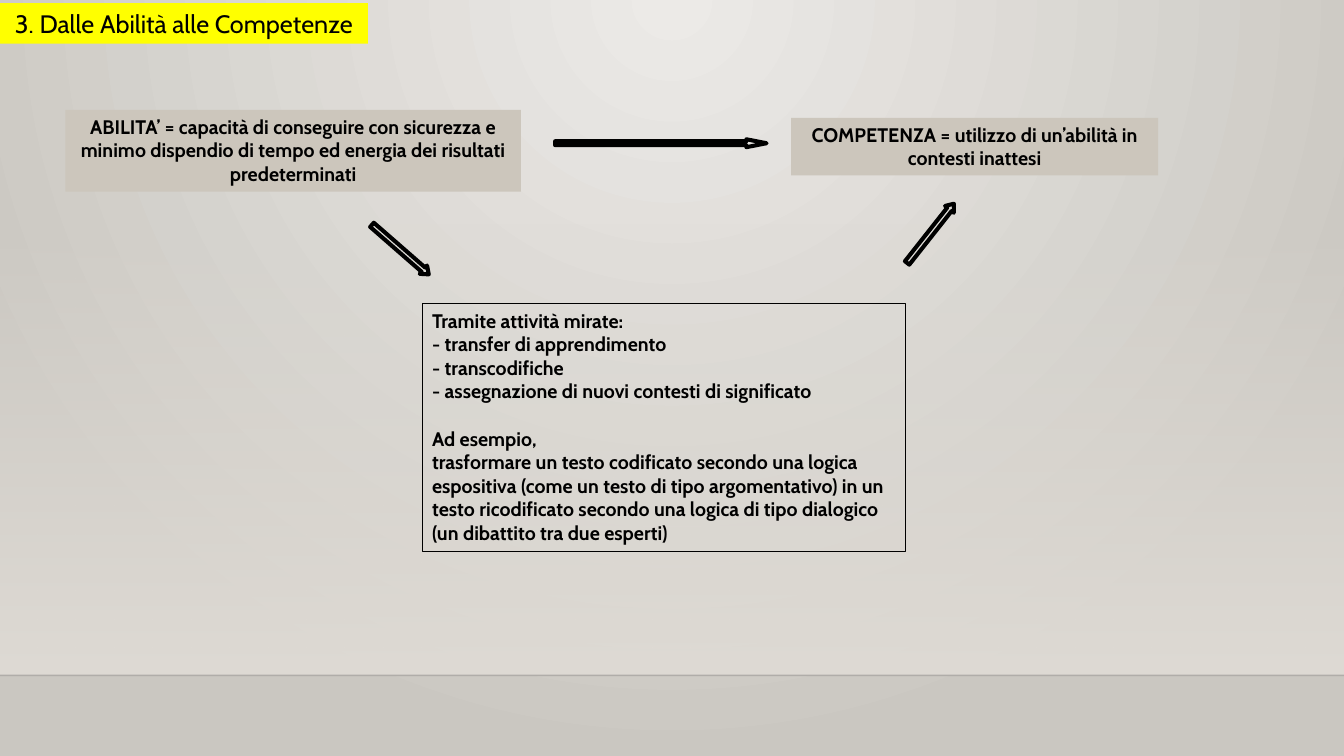
"""Build the slide on moving from abilities to competences."""
from dataclasses import dataclass

import lxml.etree
import pptx
import pptx.dml.color
import pptx.enum.shapes
import pptx.enum.text
import pptx.oxml.ns
import pptx.util

Cm = pptx.util.Cm
Pt = pptx.util.Pt
RGB = pptx.dml.color.RGBColor.from_string
qn = pptx.oxml.ns.qn
Align = pptx.enum.text.PP_ALIGN


@dataclass(frozen=True)
class Theme:
    font: str = "Cabin"
    title_size: float = 18
    body_size: float = 14
    block_gap: float = 17
    ink: str = "000000"
    highlight: str = "FFFF00"
    panel: str = "CCC6BC"
    wall_light: str = "ECEAE7"
    wall_dark: str = "CAC7C1"
    glow: str = "DFDBD5"
    floor_line: str = "000001"
    box_line: float = 0.75
    arrow_line: float = 2.88


theme = Theme()


def add_text(text, *, box, size=theme.body_size, bold=True, align=Align.CENTER,
             fill=None, border=None, wrap=True):
    """Add a text box; an empty line in the text starts a spaced block."""
    shape = slide.shapes.add_textbox(*map(Cm, box))
    if fill:
        shape.fill.solid()
        shape.fill.fore_color.rgb = RGB(fill)
    if border:
        shape.line.color.rgb = RGB(theme.ink)
        shape.line.width = Pt(border)
    frame = shape.text_frame
    frame.word_wrap = wrap
    frame.auto_size = pptx.enum.text.MSO_AUTO_SIZE.SHAPE_TO_FIT_TEXT
    frame.text = text.replace("\n\n", "\n")
    block_starts = [block.split("\n")[0] for block in text.split("\n\n")[1:]]
    for paragraph in frame.paragraphs:
        paragraph.alignment = align
        if paragraph.text in block_starts:
            paragraph.space_before = Pt(theme.block_gap)
        paragraph.font.name = theme.font
        paragraph.font.size = Pt(size)
        paragraph.font.bold = bold
        paragraph.font.color.rgb = RGB(theme.ink)


def set_opacity(element, percent):
    """Set the opacity of the first explicit colour in an element."""
    color = next(element.iter(qn("a:srgbClr")))
    lxml.etree.SubElement(color, qn("a:alpha")).set("val", str(percent * 1000))


presentation = pptx.Presentation()
presentation.slide_width = Cm(33.87)
presentation.slide_height = Cm(19.05)
slide = presentation.slides.add_slide(presentation.slide_layouts[6])

wall = slide.background.fill
wall.gradient()
for stop, color in zip(wall.gradient_stops, (theme.wall_light, theme.wall_dark)):
    stop.color.rgb = RGB(color)
gradient = next(slide.element.iter(qn("a:gradFill")))
gradient.remove(gradient.find(qn("a:lin")))
radial = lxml.etree.SubElement(gradient, qn("a:path"), {"path": "circle"})
lxml.etree.SubElement(radial, qn("a:fillToRect"),
                      {"l": "43000", "t": "0", "r": "43000", "b": "100000"})

floor_top = 17.02
glow = slide.shapes.add_shape(pptx.enum.shapes.MSO_SHAPE.RECTANGLE,
                              0, Cm(5.61), presentation.slide_width, Cm(floor_top - 5.61))
glow.shadow.inherit = False
glow.line.fill.background()
glow.fill.gradient()
glow.fill.gradient_angle = 270
for stop in glow.fill.gradient_stops:
    stop.color.rgb = RGB(theme.glow)
set_opacity(glow.element, 0)

floor_edge = slide.shapes.add_connector(pptx.enum.shapes.MSO_CONNECTOR.STRAIGHT, 0,
                                        Cm(floor_top), presentation.slide_width, Cm(floor_top))
floor_edge.line.color.rgb = RGB(theme.floor_line)
floor_edge.line.width = Pt(1)
set_opacity(floor_edge.element, 20)
lxml.etree.SubElement(floor_edge.element.spPr, qn("a:effectLst"))

add_text("COMPETENZA = utilizzo di un’abilità in contesti inattesi",
         box=(19.94, 2.97, 9.25, 1.45), fill=theme.panel)
add_text("ABILITA’ = capacità di conseguire con sicurezza e minimo dispendio "
         "di tempo ed energia dei risultati predeterminati",
         box=(1.65, 2.77, 11.48, 2.06), fill=theme.panel)
add_text("Tramite attività mirate:\n"
         "- transfer di apprendimento\n"
         "- transcodifiche\n"
         "- assegnazione di nuovi contesti di significato\n\n"
         "Ad esempio,\n"
         "trasformare un testo codificato secondo una logica espositiva "
         "(come un testo di tipo argomentativo) in un testo ricodificato "
         "secondo una logica di tipo dialogico (un dibattito tra due esperti)",
         box=(10.64, 7.65, 12.17, 6.25), align=Align.LEFT, border=theme.box_line)
add_text("3. Dalle Abilità alle Competenze", box=(0, 0.08, 9.27, 1.02),
         size=theme.title_size, bold=False, fill=theme.highlight, wrap=False)

arrows = [
    (13.99, 3.51, 5.33, 0.2, 0.51, 0),
    (9.14, 6.15, 1.9, 0.28, 0.18, 41.1),
    (22.5, 5.74, 1.9, 0.28, 0.18, 308.3),
]
for left, top, length, width, head, rotation in arrows:
    neck = left + length - head
    shaft_top, shaft_bottom = top + width / 4, top + width * 3 / 4
    outline = [(neck, shaft_top), (neck, top), (left + length, top + width / 2),
               (neck, top + width), (neck, shaft_bottom), (left, shaft_bottom)]
    builder = slide.shapes.build_freeform(Cm(left), Cm(shaft_top))
    builder.add_line_segments([(Cm(x), Cm(y)) for x, y in outline], close=True)
    arrow = builder.convert_to_shape()
    arrow.shadow.inherit = False
    arrow.fill.background()
    arrow.line.color.rgb = RGB(theme.ink)
    arrow.line.width = Pt(theme.arrow_line)
    arrow.rotation = rotation

presentation.save("out.pptx")
